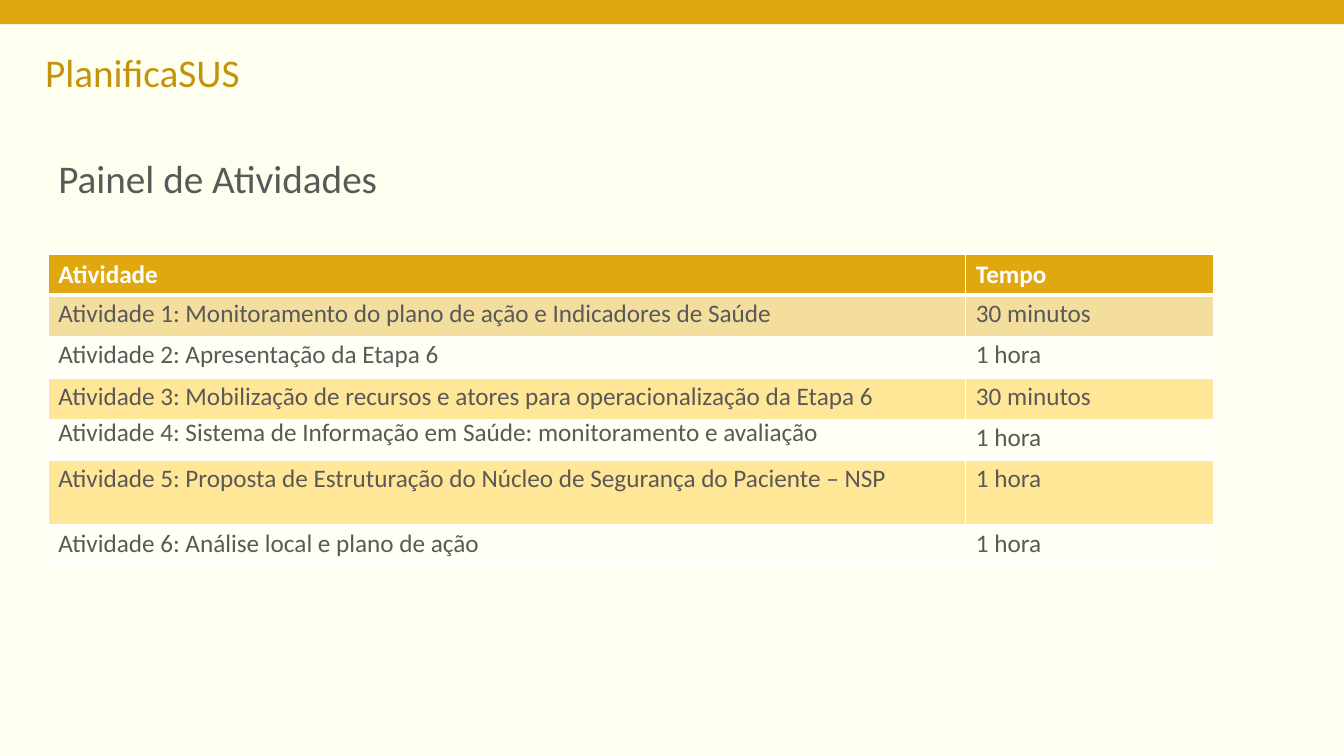
from lxml.etree import SubElement
from pptx import Presentation
from pptx.dml.color import RGBColor
from pptx.enum.shapes import MSO_SHAPE as Shape
from pptx.enum.text import MSO_ANCHOR as Anchor, MSO_AUTO_SIZE as AutoSize
from pptx.oxml import parse_xml
from pptx.oxml.ns import nsdecls, qn
from pptx.util import Inches, Pt

COLORS = {
    "background": "FFFFF0",
    "gold": "E0A70F",
    "brand": "C3930B",
    "text": "595959",
    "white": "FFFFFF",
    "amber": "FFC000",
}
BODY_OPACITY = 37

ACTIVITIES = [
    ("Atividade 1: Monitoramento do plano de ação e Indicadores de Saúde", "30 minutos"),
    ("Atividade 2: Apresentação da Etapa 6", "1 hora"),
    ("Atividade 3: Mobilização de recursos e atores para operacionalização da Etapa 6", "30 minutos"),
    ("Atividade 4: Sistema de Informação em Saúde: monitoramento e avaliação", "1 hora"),
    ("Atividade 5: Proposta de Estruturação do Núcleo de Segurança do Paciente – NSP", "1 hora"),
    ("Atividade 6: Análise local e plano de ação", "1 hora"),
]
COLUMN_WIDTHS = (9.1, 2.46)
ROW_HEIGHT = 0.41
TALL_ROW, TALL_HEIGHT = 5, 0.64
FLUSH_ROW = 4


def rgb(name):
    return RGBColor.from_string(COLORS[name])


class SlideBuilder:
    font_name = "Calibri"

    def __init__(self, slide):
        self.slide = slide

    def background(self, color):
        fill = self.slide.background.fill
        fill.solid()
        fill.fore_color.rgb = rgb(color)

    def bar(self, left, top, width, height, color):
        shape = self.slide.shapes.add_shape(
            Shape.RECTANGLE, *map(Inches, (left, top, width, height)))
        shape.shadow.inherit = False
        shape.fill.solid()
        shape.fill.fore_color.rgb = rgb(color)
        shape.line.fill.background()

    def add_words(self, frame, text, size, color, bold=False, spacing=None):
        paragraph = frame.paragraphs[0]
        paragraph.line_spacing = spacing
        run = paragraph.add_run()
        run.text = text
        formats = {"name": self.font_name, "size": Pt(size), "bold": bold}
        for attribute, value in formats.items():
            setattr(run.font, attribute, value)
        run.font.color.rgb = rgb(color)

    def text(self, left, top, width, height, text, color, frame_formats, spacing=None):
        box = self.slide.shapes.add_textbox(*map(Inches, (left, top, width, height)))
        for attribute, value in frame_formats.items():
            setattr(box.text_frame, attribute, value)
        self.add_words(box.text_frame, text, 28, color, spacing=spacing)

    def fill_cell(self, cell, color, opacity=100):
        cell.fill.solid()
        cell.fill.fore_color.rgb = rgb(color)
        if opacity < 100:
            color_element = cell._tc.tcPr.find(".//" + qn("a:srgbClr"))
            SubElement(color_element, qn("a:alpha"), val=str(opacity * 1000))

    def border_cell(self, cell, top=1, bottom=1):
        widths = {"lnL": 1, "lnR": 1, "lnT": top, "lnB": bottom}
        for position, (tag, width) in enumerate(widths.items()):
            cell._tc.get_or_add_tcPr().insert(position, parse_xml(
                f'<a:{tag} {nsdecls("a")} w="{Pt(width)}"><a:solidFill>'
                f'<a:srgbClr val="{COLORS["white"]}"/></a:solidFill></a:{tag}>'))

    def table(self, left, top, header, rows):
        records = [header, *rows]
        heights = [TALL_HEIGHT if index == TALL_ROW else ROW_HEIGHT
                   for index in range(len(records))]
        table = self.slide.shapes.add_table(
            len(records), len(header), Inches(left), Inches(top),
            Inches(sum(COLUMN_WIDTHS)), Inches(sum(heights))).table
        for column, width in zip(table.columns, COLUMN_WIDTHS):
            column.width = Inches(width)
        for row, height in zip(table.rows, heights):
            row.height = Inches(height)

        for row_index, record in enumerate(records):
            for column_index, text in enumerate(record):
                cell = table.cell(row_index, column_index)
                if row_index == 0:
                    self.fill_cell(cell, "gold")
                    self.border_cell(cell, bottom=3)
                    self.add_words(cell.text_frame, text, 18, "white", bold=True)
                    continue
                # The first activity is gold; the rest alternate
                band = "white" if row_index % 2 == 0 else "amber"
                self.fill_cell(cell, "gold" if row_index == 1 else band, BODY_OPACITY)
                self.border_cell(cell, top=3 if row_index == 1 else 1)
                self.add_words(cell.text_frame, text, 18, "text", spacing=0.9)
        flush_cell = table.cell(FLUSH_ROW, 0)
        flush_cell.margin_top = flush_cell.margin_bottom = 0


def main():
    presentation = Presentation()
    presentation.slide_width = Inches(13.33)
    presentation.slide_height = Inches(7.5)
    builder = SlideBuilder(presentation.slides.add_slide(presentation.slide_layouts[6]))

    # Page frame
    builder.background("background")
    builder.text(0.35, 0.43, 2.15, 0.57, "PlanificaSUS", "brand",
                 {"word_wrap": False, "auto_size": AutoSize.SHAPE_TO_FIT_TEXT})
    builder.bar(0, 0, 13.33, 0.24, "gold")

    # Title
    builder.text(0.48, 1.07, 10.99, 1.45, "Painel de Atividades", "text",
                 {"word_wrap": True, "vertical_anchor": Anchor.MIDDLE}, spacing=0.9)

    # Activity schedule
    builder.table(0.48, 2.52, ("Atividade", "Tempo"), ACTIVITIES)

    presentation.save("out.pptx")


if __name__ == "__main__":
    main()
